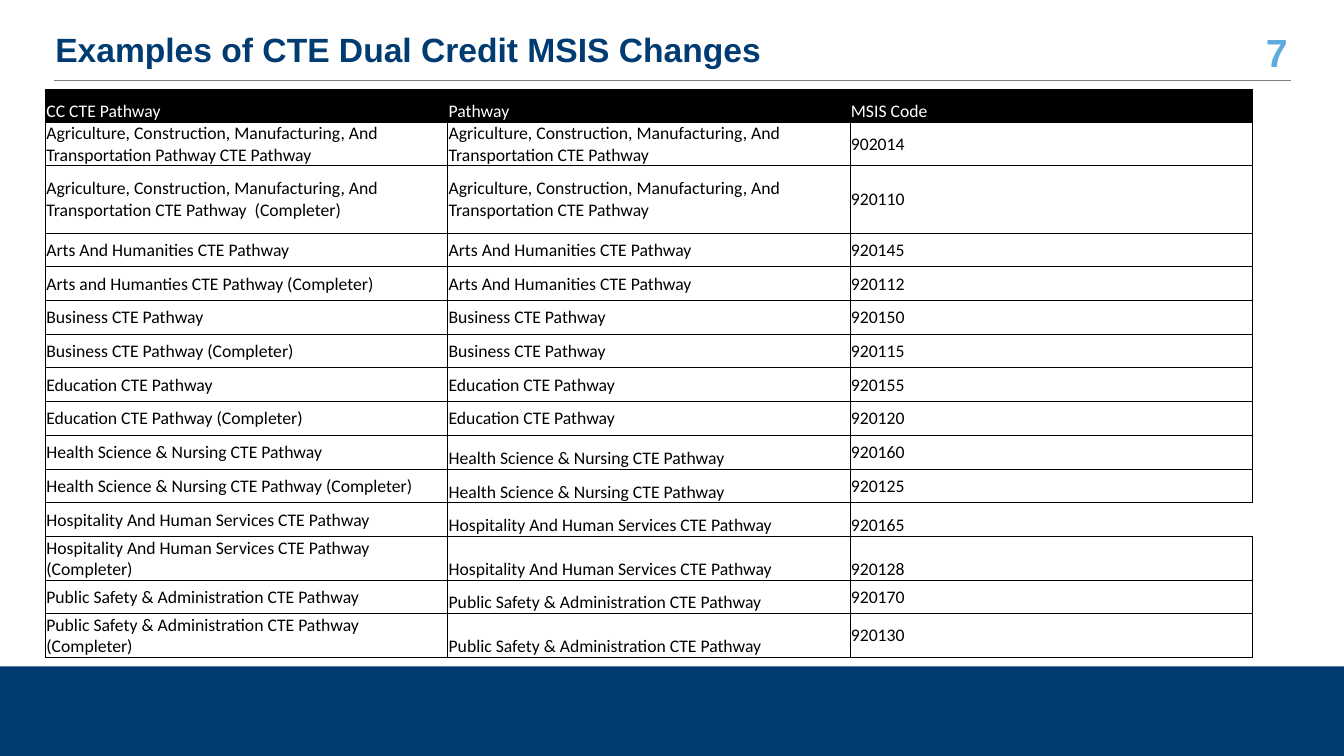
import pptx
import pptx.dml.color
import pptx.enum.shapes
import pptx.enum.text
import pptx.oxml.ns
import pptx.util
from lxml import etree

Inches = pptx.util.Inches
Pt = pptx.util.Pt
RGBColor = pptx.dml.color.RGBColor
Anchor = pptx.enum.text.MSO_ANCHOR
Align = pptx.enum.text.PP_ALIGN

NAVY = RGBColor(0x00, 0x3B, 0x71)
SKY = RGBColor(0x5F, 0xAA, 0xDE)
GRAY = RGBColor(0x80, 0x80, 0x80)
BLACK = RGBColor(0x00, 0x00, 0x00)
WHITE = RGBColor(0xFF, 0xFF, 0xFF)

HEADER = ("CC CTE Pathway", "Pathway", "MSIS Code")
AGRICULTURE = "Agriculture, Construction, Manufacturing, And Transportation"
ARTS = "Arts And Humanities CTE Pathway"
BUSINESS = "Business CTE Pathway"
EDUCATION = "Education CTE Pathway"
HEALTH = "Health Science & Nursing CTE Pathway"
HOSPITALITY = "Hospitality And Human Services CTE Pathway"
SAFETY = "Public Safety & Administration CTE Pathway"
COMPLETER = " (Completer)"

# Row heights: the tallest row is two single rows high
TALL = 0.67
SINGLE = TALL / 2
TWO_LINES = 0.43
HEADER_HEIGHT = 0.32

# College pathway, pathway, code, row height
ROWS = [
    (AGRICULTURE + " Pathway CTE Pathway", AGRICULTURE + " CTE Pathway", "902014", TWO_LINES),
    (AGRICULTURE + " CTE Pathway " + COMPLETER, AGRICULTURE + " CTE Pathway", "920110", TALL),
    (ARTS, ARTS, "920145", SINGLE),
    ("Arts and Humanties CTE Pathway" + COMPLETER, ARTS, "920112", SINGLE),
    (BUSINESS, BUSINESS, "920150", SINGLE),
    (BUSINESS + COMPLETER, BUSINESS, "920115", SINGLE),
    (EDUCATION, EDUCATION, "920155", SINGLE),
    (EDUCATION + COMPLETER, EDUCATION, "920120", SINGLE),
    (HEALTH, HEALTH, "920160", SINGLE),
    (HEALTH + COMPLETER, HEALTH, "920125", SINGLE),
    (HOSPITALITY, HOSPITALITY, "920165", SINGLE),
    (HOSPITALITY + COMPLETER, HOSPITALITY, "920128", TWO_LINES),
    (SAFETY, SAFETY, "920170", SINGLE),
    (SAFETY + COMPLETER, SAFETY, "920130", TWO_LINES),
]
BOTTOM_PATHWAYS = (HEALTH, HOSPITALITY, SAFETY)
BOTTOM_CODES = ("920165", "920128")
OPEN_RIGHT_CODE = "920165"


class SlideBuilder:
    """Holds the text styles and the current slide."""

    title_style = {"name": "Arial", "size": Pt(24), "bold": True}
    number_style = {"name": "Arial", "size": Pt(28), "bold": True}
    cell_style = {"name": "Calibri", "size": Pt(12.6), "bold": False}

    def __init__(self, presentation):
        self.slide = presentation.slides.add_slide(presentation.slide_layouts[6])

    def add_run(self, paragraph, text, style, color):
        run = paragraph.add_run()
        run.text = text
        for attribute, value in style.items():
            setattr(run.font, attribute, value)
        run.font.color.rgb = color

    def add_band(self, left, top, width, height, color):
        shape = self.slide.shapes.add_shape(
            pptx.enum.shapes.MSO_SHAPE.RECTANGLE,
            Inches(left), Inches(top), Inches(width), Inches(height))
        shape.shadow.inherit = False
        shape.fill.solid()
        shape.fill.fore_color.rgb = color
        shape.line.fill.background()

    def add_rule(self, left, right, top, color):
        connector = self.slide.shapes.add_connector(
            pptx.enum.shapes.MSO_CONNECTOR.STRAIGHT,
            Inches(left), Inches(top), Inches(right), Inches(top))
        connector.line.color.rgb = color
        connector.line.width = Pt(0.5)
        etree.SubElement(connector._element.spPr, pptx.oxml.ns.qn("a:effectLst"))

    def add_text(self, left, top, width, height, text, style, color, align=Align.LEFT):
        shape = self.slide.shapes.add_textbox(
            Inches(left), Inches(top), Inches(width), Inches(height))
        frame = shape.text_frame
        frame.word_wrap = True
        frame.vertical_anchor = Anchor.MIDDLE
        paragraph = frame.paragraphs[0]
        paragraph.alignment = align
        paragraph.line_spacing = 0.9
        self.add_run(paragraph, text, style, color)

    def add_borders(self, cell, sides):
        properties = cell._tc.get_or_add_tcPr()
        for side in "LRTB":
            line = etree.SubElement(properties, pptx.oxml.ns.qn("a:ln" + side), w=str(Pt(0.5)))
            if side in sides:
                fill = etree.SubElement(line, pptx.oxml.ns.qn("a:solidFill"))
                etree.SubElement(fill, pptx.oxml.ns.qn("a:srgbClr"), val=str(BLACK))
            else:
                etree.SubElement(line, pptx.oxml.ns.qn("a:noFill"))

    def fill_cell(self, cell, text, color, anchor, fill=None, sides="LRTB"):
        layout = {"margin_left": Inches(0.01), "margin_right": Inches(0.01),
                  "margin_top": Inches(0.01), "margin_bottom": 0,
                  "vertical_anchor": anchor}
        for attribute, value in layout.items():
            setattr(cell, attribute, value)
        self.add_borders(cell, sides)
        if fill is None:
            cell.fill.background()
        else:
            cell.fill.solid()
            cell.fill.fore_color.rgb = fill
        self.add_run(cell.text_frame.paragraphs[0], text, self.cell_style, color)

    def add_table(self, left, top, width, header, rows):
        heights = [HEADER_HEIGHT] + [row[-1] for row in rows]
        table = self.slide.shapes.add_table(
            len(heights), len(header), Inches(left), Inches(top),
            Inches(width), Inches(sum(heights))).table
        table.first_row = False
        table.horz_banding = False
        for table_row, height in zip(table.rows, heights):
            table_row.height = Inches(height)
        for column, text in enumerate(header):
            self.fill_cell(table.cell(0, column), text, WHITE, Anchor.BOTTOM, BLACK)
        for index, (college, pathway, code, _) in enumerate(rows, 1):
            low_pathway = pathway in BOTTOM_PATHWAYS
            low_code = code in BOTTOM_CODES
            code_sides = "LTB" if code == OPEN_RIGHT_CODE else "LRTB"
            entries = ((college, False, "LRTB"), (pathway, low_pathway, "LRTB"),
                       (code, low_code, code_sides))
            for column, (text, low, sides) in enumerate(entries):
                anchor = Anchor.BOTTOM if low else Anchor.MIDDLE
                self.fill_cell(table.cell(index, column), text, BLACK, anchor, sides=sides)


def main():
    presentation = pptx.Presentation()
    presentation.slide_width = Inches(13.33)
    presentation.slide_height = Inches(7.5)
    builder = SlideBuilder(presentation)

    # Footer band, page number and rule
    builder.add_band(-0.01, 6.61, 13.34, 0.95, NAVY)
    builder.add_text(12.07, 0.33, 0.8, 0.42, "7", builder.number_style, SKY, Align.RIGHT)
    builder.add_rule(0.54, 12.8, 0.8, GRAY)

    # Title
    builder.add_text(0.45, 0.3, 11.6, 0.42, "Examples of CTE Dual Credit MSIS Changes",
                     builder.title_style, NAVY)

    # Pathway codes
    builder.add_table(0.45, 0.89, 11.97, HEADER, ROWS)

    presentation.save("out.pptx")


if __name__ == "__main__":
    main()
